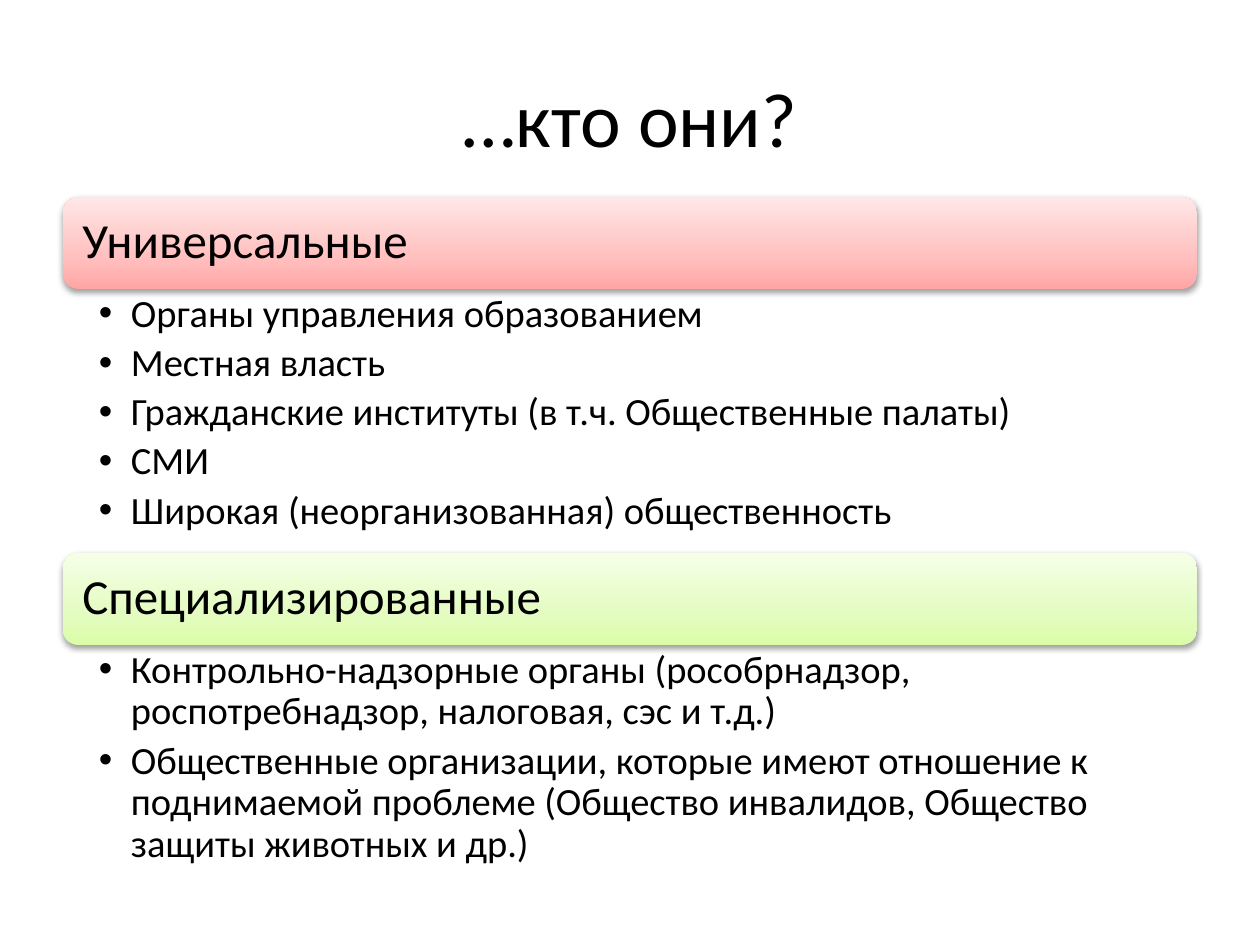
"""Build a slide listing universal and specialised external partners."""
from lxml import etree
from pptx import Presentation
from pptx import util as u
from pptx.dml import color
from pptx.enum import shapes, text
from pptx.oxml import ns

PX = 914400 / 126
LEFT, WIDTH, BAR_HEIGHT = 63, 1134, 92
BULLET_INDENT = 32
FONT = {"name": "Calibri"}
BAR_FORMAT = {"margin_left": 15, "margin_right": 15, "margin_top": 15, "margin_bottom": 15}
LIST_FORMAT = {"margin_left": 36, "margin_right": 28, "margin_top": 5, "margin_bottom": 5}

GROUPS = [
    ("Универсальные", 197, 264, [(0, "FFA6A5"), (35, "FFC0BF"), (100, "FFE7E7")], [
        "Органы управления образованием",
        "Местная власть",
        "Гражданские институты (в т.ч. Общественные палаты)",
        "СМИ",
        "Широкая (неорганизованная) общественность",
    ]),
    ("Специализированные", 553, 232, [(0, "DAFDA7"), (35, "E4FCC2"), (100, "F5FFE7")], [
        "Контрольно-надзорные органы (рособрнадзор, роспотребнадзор, налоговая, сэс и т.д.)",
        "Общественные организации, которые имеют отношение к поднимаемой проблеме "
        "(Общество инвалидов, Общество защиты животных и др.)",
    ]),
]


def px(length):
    return u.Emu(round(length * PX))


def rgb(value):
    return color.RGBColor.from_string(value)


def add_child(parent, tag, **attributes):
    child = etree.SubElement(parent, ns.qn(tag))
    for key, value in attributes.items():
        child.set(key, str(value))
    return child


def apply(target, values):
    for key, value in values.items():
        setattr(target, key, value)


def format_frame(frame, margins, anchor):
    frame.word_wrap = True
    frame.vertical_anchor = anchor
    apply(frame, {side: px(length) for side, length in margins.items()})


def write(paragraph, wording, size, **layout):
    paragraph.text = wording
    apply(paragraph, layout)
    apply(paragraph.font, FONT | {"size": u.Pt(size)})
    paragraph.font.color.rgb = rgb("000000")


def add_bullet(paragraph):
    properties = paragraph._p.get_or_add_pPr()
    properties.set("marL", str(px(BULLET_INDENT)))
    properties.set("indent", str(-px(BULLET_INDENT)))
    add_child(properties, "a:buFont", typeface="Arial")
    add_child(properties, "a:buChar", char="•")


def fill_gradient(bar, stops):
    bar.fill.gradient()
    stop_list = bar._element.spPr.find(ns.qn("a:gradFill")).find(ns.qn("a:gsLst"))
    for stop in list(stop_list):
        stop_list.remove(stop)
    for percent, value in stops:
        stop = add_child(stop_list, "a:gs", pos=percent * 1000)
        add_child(stop, "a:srgbClr", val=value)
    bar.fill.gradient_angle = 90


def add_shadow(bar):
    bar.shadow.inherit = False
    effects = bar._element.spPr.find(ns.qn("a:effectLst"))
    shadow = add_child(effects, "a:outerShdw", blurRad=40000, dist=20000,
                       dir=5400000, rotWithShape=0)
    add_child(add_child(shadow, "a:srgbClr", val="000000"), "a:alpha", val=38000)


def add_title(slide, wording):
    title = slide.shapes.add_textbox(px(LEFT), px(38), px(WIDTH), px(158))
    format_frame(title.text_frame, {}, text.MSO_ANCHOR.MIDDLE)
    write(title.text_frame.paragraphs[0], wording, 44, alignment=text.PP_ALIGN.CENTER)


def add_bar(slide, heading, top, stops):
    bar = slide.shapes.add_shape(shapes.MSO_SHAPE.ROUNDED_RECTANGLE,
                                 px(LEFT), px(top), px(WIDTH), px(BAR_HEIGHT))
    fill_gradient(bar, stops)
    bar.line.fill.background()
    add_shadow(bar)
    format_frame(bar.text_frame, BAR_FORMAT, text.MSO_ANCHOR.MIDDLE)
    write(bar.text_frame.paragraphs[0], heading, 28,
          alignment=text.PP_ALIGN.LEFT, line_spacing=0.9)


def add_list(slide, members, top, height):
    box = slide.shapes.add_textbox(px(LEFT), px(top), px(WIDTH), px(height))
    frame = box.text_frame
    format_frame(frame, LIST_FORMAT, text.MSO_ANCHOR.TOP)
    for index, member in enumerate(members):
        paragraph = frame.add_paragraph() if index else frame.paragraphs[0]
        add_bullet(paragraph)
        write(paragraph, member, 22, level=1, line_spacing=0.9, space_after=u.Pt(4.4))


def main():
    deck = Presentation()
    apply(deck, {"slide_width": px(1260), "slide_height": px(945)})
    slide = deck.slides.add_slide(deck.slide_layouts[6])
    add_title(slide, "…кто они?")
    for heading, top, list_height, stops, members in GROUPS:
        add_bar(slide, heading, top, stops)
        add_list(slide, members, top + BAR_HEIGHT, list_height)
    deck.save("out.pptx")


if __name__ == "__main__":
    main()
